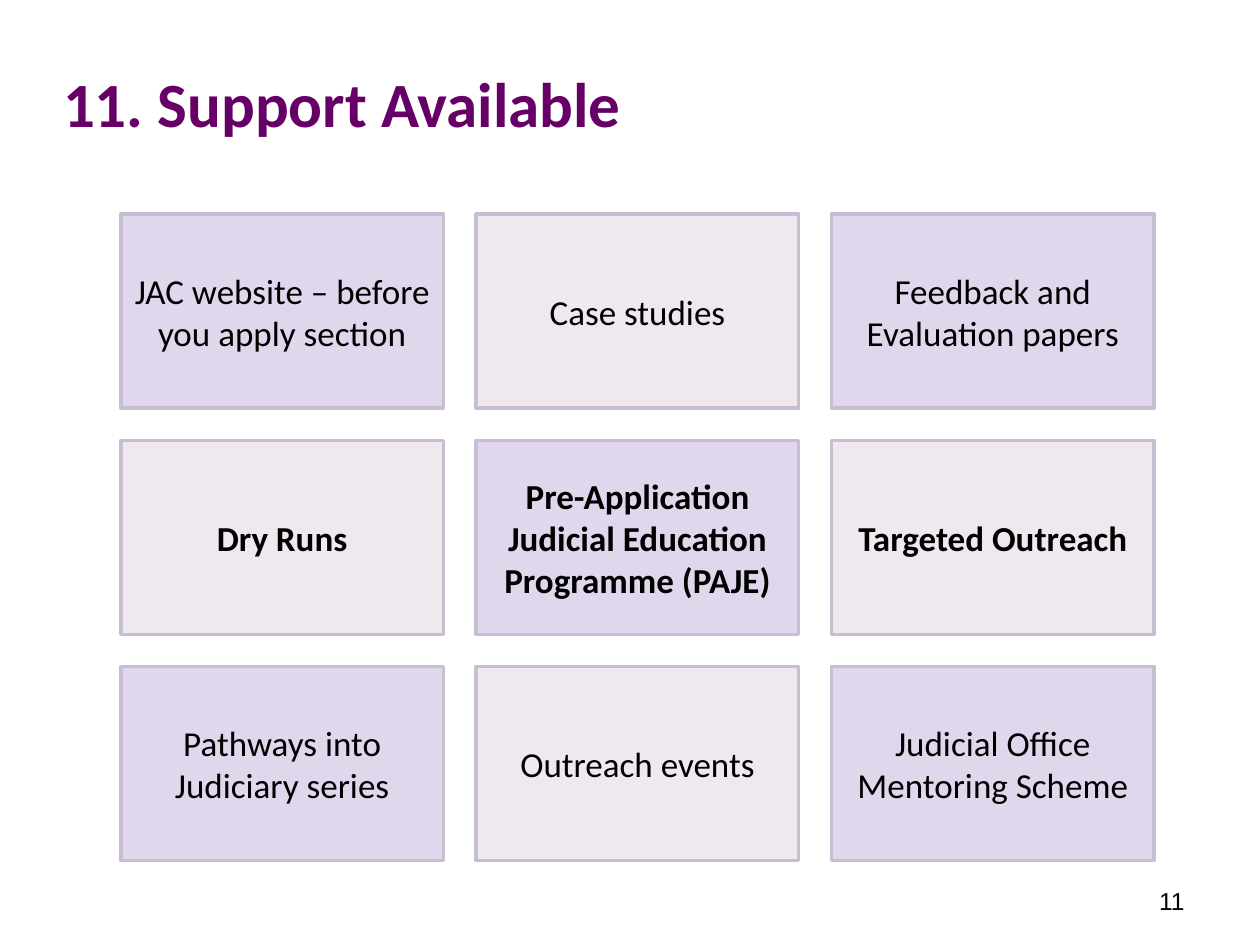
from pptx import Presentation
from pptx.dml.color import RGBColor
from pptx.enum.shapes import MSO_SHAPE
from pptx.enum.text import MSO_ANCHOR, PP_ALIGN
from pptx.util import Inches, Pt

COLORS = {
    "title": "660066",
    "text": "000000",
    "lilac": "E0D7ED",
    "pale": "EFE9EF",
    "border": "C7BED4",
}

# Each row: whether its text is bold, and its three labels
SUPPORT_ROWS = [
    (False, ["JAC website – before you apply section", "Case studies",
             "Feedback and Evaluation papers"]),
    (True, ["Dry Runs", "Pre-Application Judicial Education Programme (PAJE)",
            "Targeted Outreach"]),
    (False, ["Pathways into Judiciary series", "Outreach events",
             "Judicial Office Mentoring Scheme"]),
]

GRID_LEFT, GRID_TOP = 0.96, 1.7
CARD_WIDTH, CARD_HEIGHT = 2.56, 1.54
COLUMN_STEP, ROW_STEP = 2.82, 1.795


def color(name):
    return RGBColor.from_string(COLORS[name])


def set_text(shape, text, size, align, font="Calibri", bold=False, color_name="text"):
    text_frame = shape.text_frame
    text_frame.text = text
    text_frame.word_wrap = True
    text_frame.vertical_anchor = MSO_ANCHOR.MIDDLE
    paragraph = text_frame.paragraphs[0]
    paragraph.alignment = align
    run_font = paragraph.runs[0].font
    run_font.name = font
    run_font.size = Pt(size)
    run_font.bold = bold
    run_font.color.rgb = color(color_name)


def add_title(slide, text):
    title = slide.shapes.title
    title.left, title.top = Inches(0.4), Inches(0.39)
    title.width, title.height = Inches(9.26), Inches(0.85)
    set_text(title, text, 36, PP_ALIGN.LEFT, bold=True, color_name="title")


def add_card(slide, left, top, text, fill_name, bold):
    card = slide.shapes.add_shape(MSO_SHAPE.RECTANGLE, Inches(left), Inches(top),
                                  Inches(CARD_WIDTH), Inches(CARD_HEIGHT))
    card.shadow.inherit = False
    card.fill.solid()
    card.fill.fore_color.rgb = color(fill_name)
    card.line.color.rgb = color("border")
    card.line.width = Pt(2)
    set_text(card, text, 20, PP_ALIGN.CENTER, bold=bold)
    text_frame = card.text_frame
    text_frame.margin_left = text_frame.margin_right = Inches(0.08)
    text_frame.margin_top = text_frame.margin_bottom = Inches(0.08)


def add_card_grid(slide):
    for row, (bold, labels) in enumerate(SUPPORT_ROWS):
        for column, label in enumerate(labels):
            # Fills alternate like a chessboard
            fill_name = "pale" if (row + column) % 2 else "lilac"
            add_card(slide, GRID_LEFT + column * COLUMN_STEP,
                     GRID_TOP + row * ROW_STEP, label, fill_name, bold)


def add_page_number(slide, number):
    box = slide.shapes.add_textbox(Inches(7.17), Inches(6.95), Inches(2.33), Inches(0.4))
    set_text(box, number, 14, PP_ALIGN.RIGHT, font="Arial")


def main():
    presentation = Presentation()
    presentation.slide_width = Inches(10)
    presentation.slide_height = Inches(7.5)
    slide = presentation.slides.add_slide(presentation.slide_layouts[5])  # title only

    add_title(slide, "11. Support Available")
    add_card_grid(slide)
    add_page_number(slide, "11")

    presentation.save("out.pptx")


if __name__ == "__main__":
    main()
